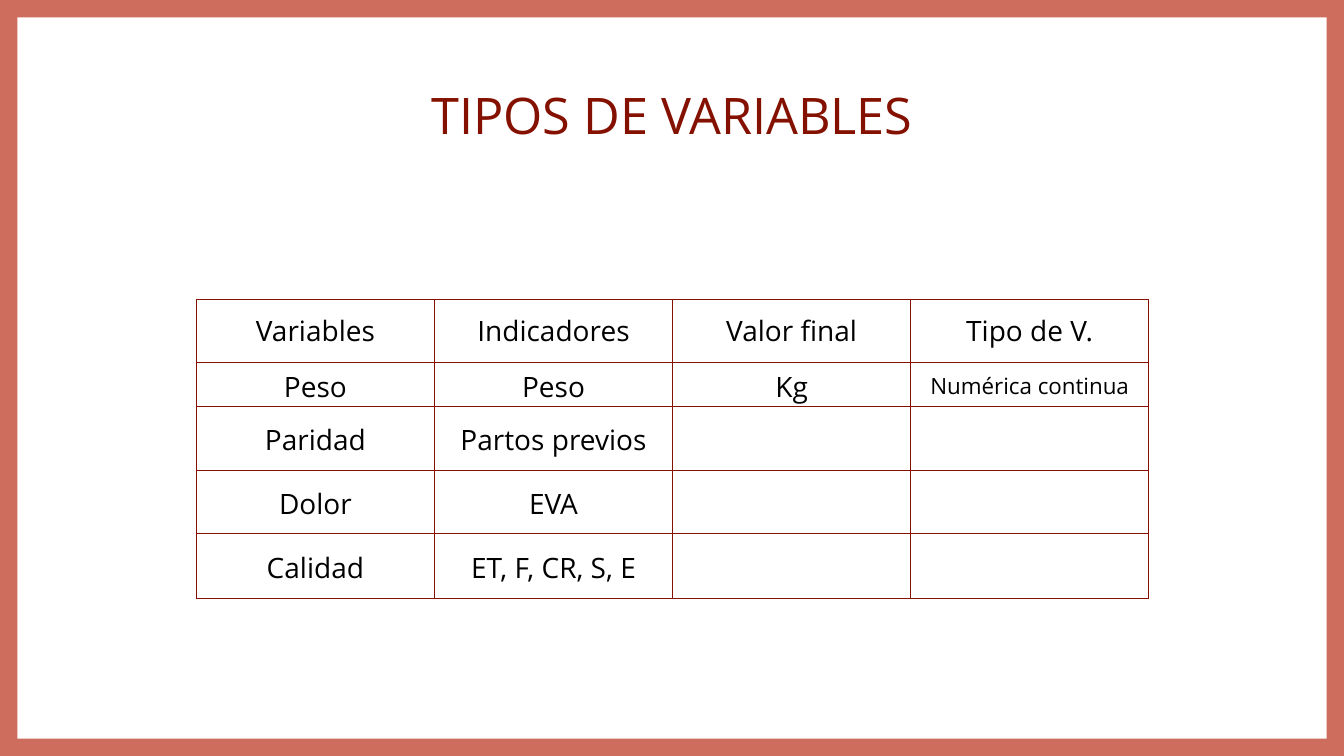
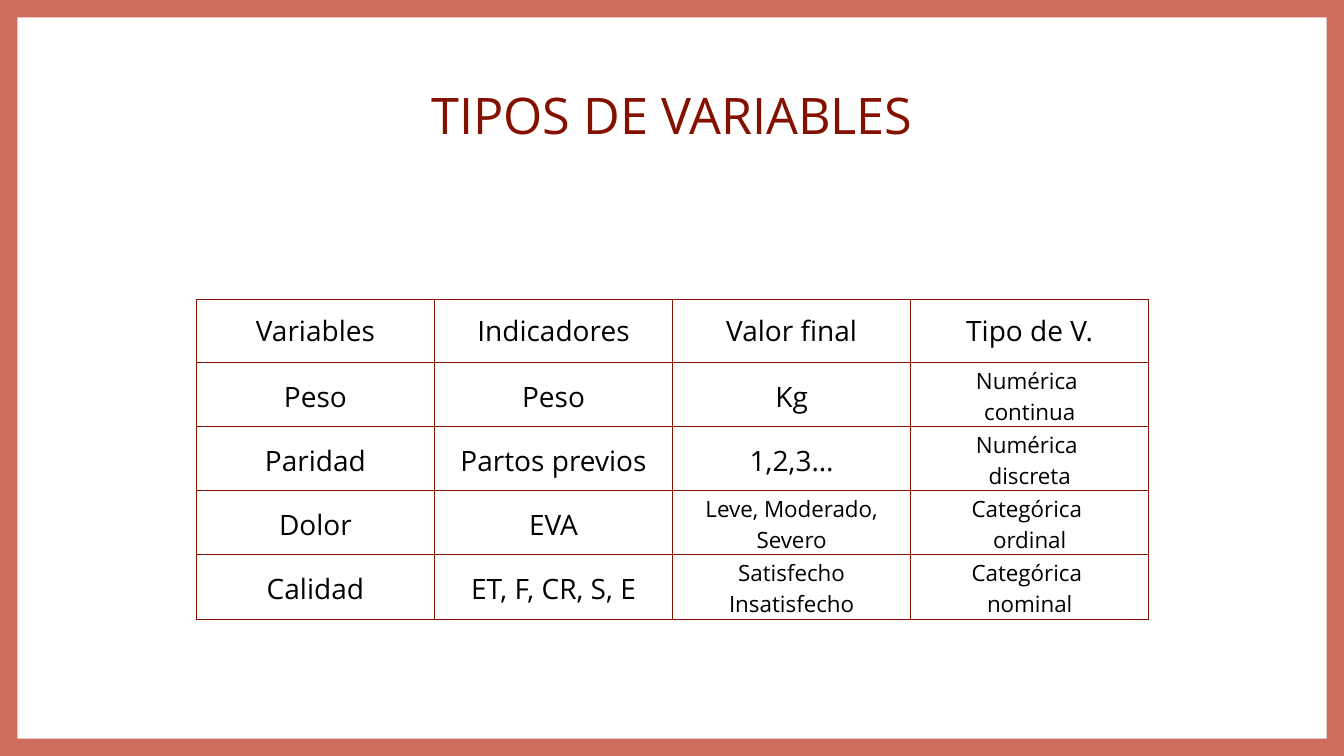
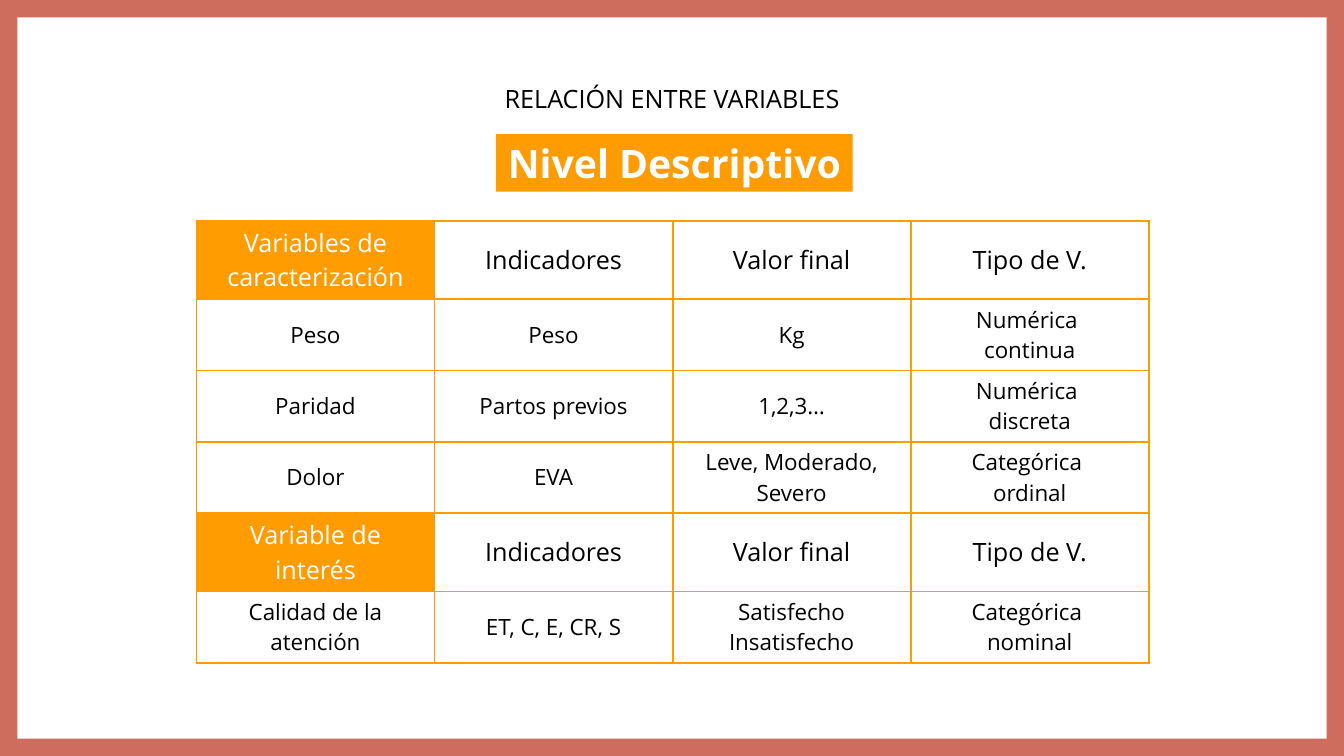
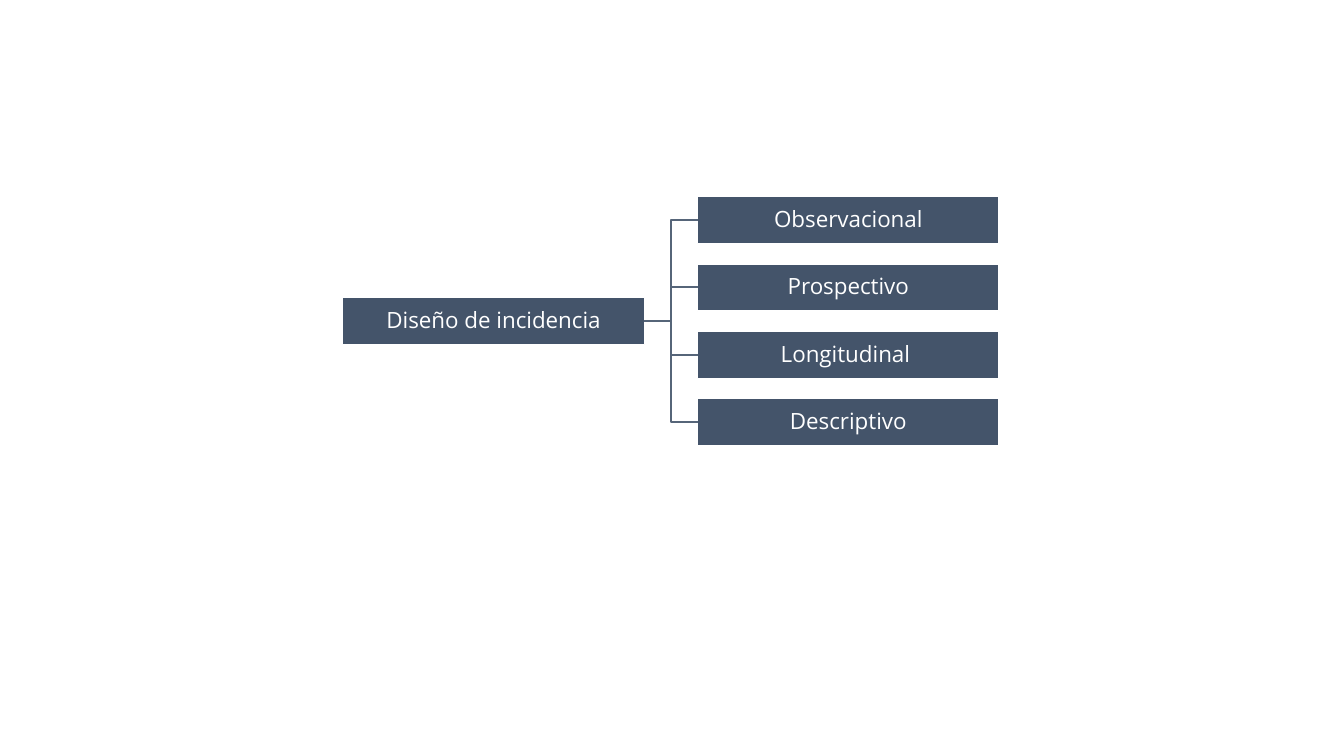
"""Build four slides on types of variables and the design of a study."""
from lxml.etree import SubElement
from pptx import Presentation
from pptx.dml.color import RGBColor
from pptx.enum.shapes import MSO_CONNECTOR as Connector, MSO_SHAPE as Shape
from pptx.enum.text import MSO_ANCHOR as Anchor, MSO_AUTO_SIZE as AutoSize, PP_ALIGN as Align
from pptx.oxml import parse_xml
from pptx.oxml.ns import nsdecls, qn
from pptx.util import Cm, Pt

COLORS = {
    "white": "FFFFFF", "black": "000000", "red": "841100", "orange": "FF9C01",
    "frame": "CE6C5D", "box": "44546A", "line": "566579",
}
RGB = {name: RGBColor.from_string(value) for name, value in COLORS.items()}
FONT = "Open Sans"
SLIDE_WIDTH, SLIDE_HEIGHT = Cm(33.87), Cm(19.05)
COLUMN_WIDTH = Cm(6)


def write_text(text_frame, text, size, color, bold=False):
    """Fill a text frame with centred text in the shared font."""
    text_frame.text = text
    for paragraph in text_frame.paragraphs:
        paragraph.alignment = Align.CENTER
        paragraph.font.color.rgb = RGB[color]
        values = {"name": FONT, "size": Pt(size), "bold": bold}
        for attribute, value in values.items():
            setattr(paragraph.font, attribute, value)


HEADINGS = ["Indicadores", "Valor final", "Tipo de V."]
CONTINUOUS, DISCRETE = "Numérica \ncontinua", "Numérica \ndiscreta"
ORDINAL, NOMINAL = "Categórica \nordinal", "Categórica \nnominal"
SEVERITY, SATISFACTION = "Leve, Moderado, Severo", "Satisfecho\vInsatisfecho"
DETAILS = {"Numérica continua", CONTINUOUS, DISCRETE, ORDINAL, NOMINAL, SEVERITY, SATISFACTION}
WEIGHT = ["Peso", "Peso", "Kg", CONTINUOUS]
PARITY = ["Paridad", "Partos previos", "1,2,3…", DISCRETE]
PAIN = ["Dolor", "EVA", SEVERITY, ORDINAL]
QUALITY = ["Calidad", "ET, F, CR, S, E", SATISFACTION, NOMINAL]

TYPES_STYLE = {
    "title": "TIPOS DE VARIABLES", "title_size": 36, "title_color": "red",
    "title_height": 1.8, "table_top": 7.54, "border": "red", "border_width": 0.5,
    "heading_size": 20, "body_size": 20, "margins": (0.08, 0),
    "heading_fill": "white", "heading_color": "black", "badge": None,
}
TABLE_SLIDES = [
    {
        **TYPES_STYLE,
        "heights": [1.6, 1.11, 1.6, 1.6, 1.62],
        "rows": [
            ["Variables", *HEADINGS],
            [*WEIGHT[:3], "Numérica continua"],
            *([*row[:2], "", ""] for row in (PARITY, PAIN, QUALITY)),
        ],
    },
    {
        **TYPES_STYLE,
        "heights": [1.6, 1.61, 1.61, 1.61, 1.62],
        "rows": [["Variables", *HEADINGS], WEIGHT, PARITY, PAIN, QUALITY],
    },
    {
        "title": "RELACIÓN ENTRE VARIABLES", "title_size": 18, "title_color": "black",
        "title_height": 1.02, "table_top": 5.56, "border": "orange", "border_width": 1.5,
        "heading_size": 18, "body_size": 16, "margins": (0.13, 0.13),
        "heading_fill": "orange", "heading_color": "white", "badge": "Nivel Descriptivo",
        "heights": [1.78] * 6,
        "rows": [
            ["Variables de caracterización", *HEADINGS],
            WEIGHT, PARITY, PAIN,
            ["Variable de interés", *HEADINGS],
            ["Calidad de la atención", "ET, C, E, CR, S", *QUALITY[2:]],
        ],
    },
]

presentation = Presentation()
presentation.slide_width, presentation.slide_height = SLIDE_WIDTH, SLIDE_HEIGHT
TITLE_ONLY, BLANK = presentation.slide_layouts[5], presentation.slide_layouts[6]

for content in TABLE_SLIDES:
    slide = presentation.slides.add_slide(TITLE_ONLY)
    title = slide.shapes.title
    placement = {"left": Cm(8.94), "top": Cm(1.98), "width": Cm(16),
                 "height": Cm(content["title_height"])}
    for attribute, value in placement.items():
        setattr(title, attribute, value)
    title.text_frame.auto_size = AutoSize.NONE
    title.text_frame.vertical_anchor = Anchor.TOP
    write_text(title.text_frame, content["title"], content["title_size"], content["title_color"])

    rows, heights = content["rows"], content["heights"]
    table = slide.shapes.add_table(
        len(rows), 4, Cm(4.95), Cm(content["table_top"]), 4 * COLUMN_WIDTH, Cm(sum(heights))
    ).table
    table.first_row = table.horz_banding = False
    for column in table.columns:
        column.width = COLUMN_WIDTH
    for row_index, (texts, height) in enumerate(zip(rows, heights)):
        table.rows[row_index].height = Cm(height)
        is_heading = texts[1:] == HEADINGS
        for column_index, text in enumerate(texts):
            cell = table.cell(row_index, column_index)
            is_label = is_heading and column_index == 0
            if is_heading:
                size = content["heading_size"]
            else:
                size = 16 if text in DETAILS else content["body_size"]
                cell.margin_top, cell.margin_bottom = map(Cm, content["margins"])
            write_text(cell.text_frame, text, size,
                       content["heading_color"] if is_label else "black")
            cell.vertical_anchor = Anchor.MIDDLE
            cell.fill.solid()
            cell.fill.fore_color.rgb = RGB[content["heading_fill"] if is_label else "white"]
            properties = cell._tc.get_or_add_tcPr()
            for position, side in enumerate(("lnL", "lnR", "lnT", "lnB")):
                properties.insert(position, parse_xml(
                    f'<a:{side} {nsdecls("a")} w="{Pt(content["border_width"])}"><a:solidFill>'
                    f'<a:srgbClr val="{COLORS[content["border"]]}"/></a:solidFill></a:{side}>'
                ))

    if content["badge"]:
        badge = slide.shapes.add_shape(Shape.RECTANGLE, Cm(12.5), Cm(3.38), Cm(8.99), Cm(1.45))
        badge.shadow.inherit = False
        badge.fill.solid()
        badge.fill.fore_color.rgb = RGB["orange"]
        badge.line.fill.background()
        badge.text_frame.word_wrap = False
        write_text(badge.text_frame, content["badge"], 28, "white", bold=True)

    frame = slide.shapes.add_shape(Shape.FRAME, 0, 0, SLIDE_WIDTH, SLIDE_HEIGHT)
    frame.adjustments[0] = 0.023
    frame.shadow.inherit = False
    frame.fill.solid()
    frame.fill.fore_color.rgb = RGB["frame"]
    frame.line.fill.background()

slide = presentation.slides.add_slide(BLANK)
BRANCHES = ["Observacional", "Prospectivo", "Longitudinal ", "Descriptivo"]
BOX_WIDTH, BOX_HEIGHT = 7.6, 1.19
BRANCH_LEFT, BRANCH_TOP, BRANCH_STEP = 17.58, 4.95, 1.7
root_top = BRANCH_TOP + BRANCH_STEP * (len(BRANCHES) - 1) / 2
places = [("Diseño de incidencia", 8.64, root_top)]
places += [(text, BRANCH_LEFT, BRANCH_TOP + index * BRANCH_STEP)
           for index, text in enumerate(BRANCHES)]
boxes = []
for text, left, top in places:
    box = slide.shapes.add_shape(
        Shape.RECTANGLE, Cm(left), Cm(top), Cm(BOX_WIDTH), Cm(BOX_HEIGHT))
    box.shadow.inherit = False
    box.fill.solid()
    box.fill.fore_color.rgb = RGB["box"]
    box.line.color.rgb = RGB["white"]
    box.line.width = Pt(1)
    for side in ("left", "right", "top", "bottom"):
        setattr(box.text_frame, f"margin_{side}", Cm(0.03))
    box.text_frame.vertical_anchor = Anchor.MIDDLE
    write_text(box.text_frame, text, 16, "white")
    box.text_frame.paragraphs[0].line_spacing = 0.9
    boxes.append(box)

root, *branches = boxes
for branch in branches:
    connector = slide.shapes.add_connector(Connector.ELBOW, 0, 0, 0, 0)
    connector.begin_connect(root, 3)
    connector.end_connect(branch, 1)
    connector.line.color.rgb = RGB["line"]
    connector.line.width = Pt(1.5)
    SubElement(connector._element.spPr, qn("a:effectLst"))

presentation.save("out.pptx")
